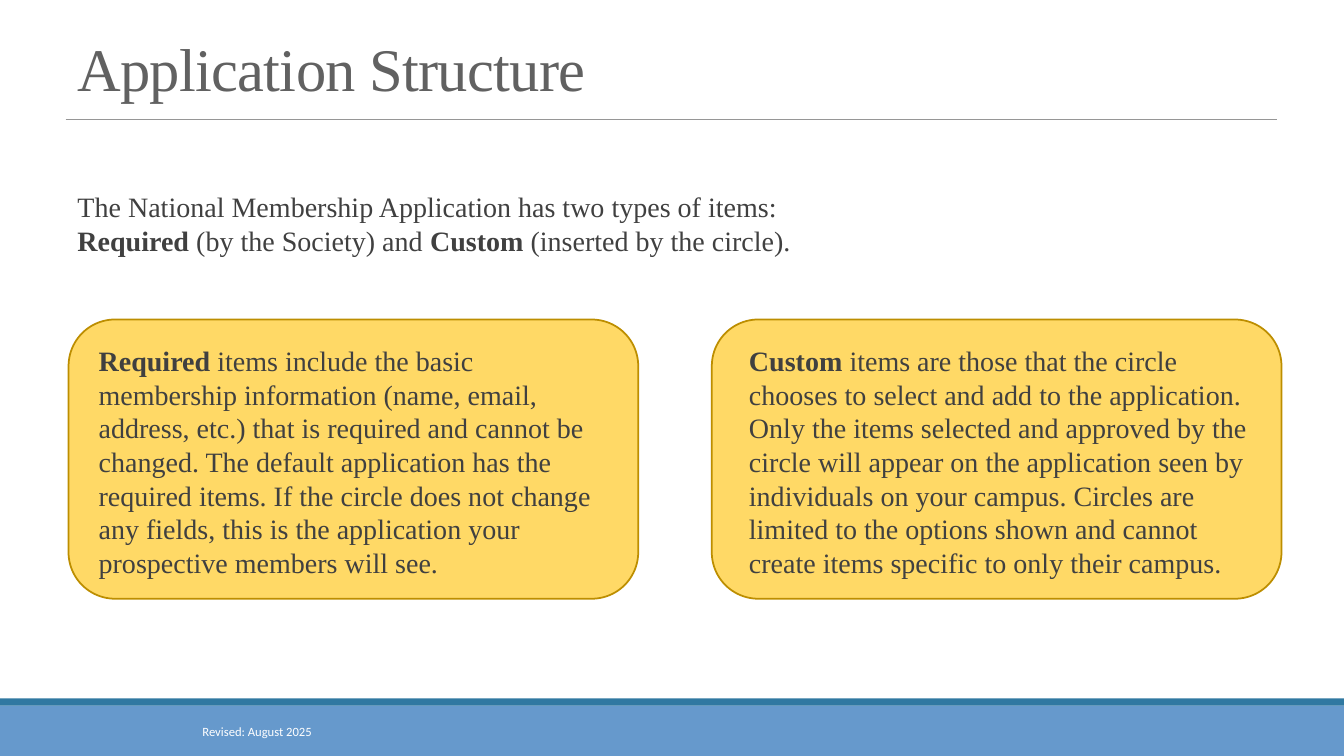
from dataclasses import dataclass

from lxml import etree
from pptx import Presentation
from pptx.dml.color import RGBColor
from pptx.enum.shapes import MSO_CONNECTOR, MSO_SHAPE
from pptx.enum.text import MSO_ANCHOR, MSO_AUTO_SIZE, PP_ALIGN
from pptx.oxml.ns import qn
from pptx.util import Inches, Pt

RECTANGLE, ROUNDED = MSO_SHAPE.RECTANGLE, MSO_SHAPE.ROUNDED_RECTANGLE
STRAIGHT = MSO_CONNECTOR.STRAIGHT
TOP, MIDDLE, BOTTOM = MSO_ANCHOR.TOP, MSO_ANCHOR.MIDDLE, MSO_ANCHOR.BOTTOM
LEFT, CENTER = PP_ALIGN.LEFT, PP_ALIGN.CENTER
FIT_SHAPE, NO_FIT = MSO_AUTO_SIZE.SHAPE_TO_FIT_TEXT, MSO_AUTO_SIZE.NONE

# A paragraph is a list of (text, bold) runs.
TITLE = [[("Application Structure", False)]]
INTRO = [
    [("The National Membership Application has two types of items:", False)],
    [("Required", True), (" (by the Society) and ", False),
     ("Custom", True), (" (inserted by the circle).", False)],
]
REQUIRED = [[
    ("Required", True),
    (" items include the basic membership information (name, email, address, "
     "etc.) that is required and cannot be changed. The default application "
     "has the required items. If the circle does not change any fields, this "
     "is the application your prospective members will see.", False),
]]
CUSTOM = [[
    ("Custom", True),
    (" items are those that the circle chooses to select and add to the "
     "application. Only the items selected and approved by the circle will "
     "appear on the application seen by individuals on your campus. Circles "
     "are limited to the options shown and cannot create items specific to "
     "only their campus.", False),
]]
REVISED = [[("Revised: August 2025", False)]]


@dataclass(frozen=True)
class Theme:
    serif: str = "Times New Roman"
    sans: str = "Calibri"
    title_size: float = 43.2
    body_size: float = 20
    footer_size: float = 9
    title: str = "616161"
    body: str = "404040"
    white: str = "FFFFFF"
    footer: str = "6699CC"
    footer_edge: str = "3078A1"
    rule: str = "969696"
    card: str = "FFD966"
    card_edge: str = "BD8E00"


THEME = Theme()
SLIDE_W, SLIDE_H = 13.33, 7.5
FOOTER_TOP, FOOTER_EDGE_H = 7, 0.07
RULE_LEFT, RULE_RIGHT, RULE_Y = 0.65, 12.67, 1.18
CARD_TOP, CARD_W, CARD_H = 3.17, 5.65, 2.77
CARD_TEXT_TOP, CARD_TEXT_W, CARD_TEXT_H = 3.36, 5.21, 2.46
# (card left, text left, text)
CARDS = [(0.68, 0.88, REQUIRED), (7.06, 7.33, CUSTOM)]


def rgb(value):
    return RGBColor.from_string(value)


def add_block(slide, kind, box, fill, edge=None):
    block = slide.shapes.add_shape(kind, *map(Inches, box))
    block.shadow.inherit = False
    block.fill.solid()
    block.fill.fore_color.rgb = rgb(fill)
    if edge:
        block.line.color.rgb = rgb(edge)
        block.line.width = Pt(1.25)
    else:
        block.line.fill.background()


def add_text(slide, box, paragraphs, *, size=THEME.body_size, font=THEME.serif,
             color=THEME.body, anchor=TOP, align=LEFT, fit=FIT_SHAPE,
             line_spacing=None, tracking=None):
    """Tracking is the letter spacing in points."""
    frame = slide.shapes.add_textbox(*map(Inches, box)).text_frame
    frame.word_wrap = True
    frame.auto_size = fit
    frame.vertical_anchor = anchor
    for index, runs in enumerate(paragraphs):
        paragraph = frame.add_paragraph() if index else frame.paragraphs[0]
        paragraph.alignment = align
        if line_spacing:
            paragraph.line_spacing = line_spacing
        for text, bold in runs:
            run = paragraph.add_run()
            run.text = text
            run.font.name = font
            run.font.size = Pt(size)
            run.font.bold = bold
            run.font.color.rgb = rgb(color)
            if tracking:
                run.font._element.set("spc", str(round(tracking * 100)))


def add_rule(slide):
    rule = slide.shapes.add_connector(
        STRAIGHT, *map(Inches, (RULE_LEFT, RULE_Y, RULE_RIGHT, RULE_Y)))
    rule.line.color.rgb = rgb(THEME.rule)
    rule.line.width = Pt(0.5)
    etree.SubElement(rule._element.spPr, qn("a:effectLst"))


def main():
    deck = Presentation()
    deck.slide_width, deck.slide_height = Inches(SLIDE_W), Inches(SLIDE_H)
    slide = deck.slides.add_slide(deck.slide_layouts[6])

    add_block(slide, RECTANGLE,
              (0, FOOTER_TOP, SLIDE_W, SLIDE_H - FOOTER_TOP), THEME.footer)
    add_block(slide, RECTANGLE,
              (0, FOOTER_TOP - FOOTER_EDGE_H, SLIDE_W, FOOTER_EDGE_H),
              THEME.footer_edge)
    add_rule(slide)
    add_text(slide, (0.67, 0.31, 9.43, 0.77), TITLE, size=THEME.title_size,
             color=THEME.title, anchor=BOTTOM, fit=NO_FIT,
             line_spacing=0.85, tracking=-0.5)
    add_text(slide, (0.67, 1.83, 12.02, 0.77), INTRO)
    for card_left, text_left, text in CARDS:
        add_block(slide, ROUNDED, (card_left, CARD_TOP, CARD_W, CARD_H),
                  THEME.card, THEME.card_edge)
        add_text(slide, (text_left, CARD_TEXT_TOP, CARD_TEXT_W, CARD_TEXT_H),
                 text)
    add_text(slide, (1.2, 7.06, 2.7, 0.4), REVISED, size=THEME.footer_size,
             font=THEME.sans, color=THEME.white, anchor=MIDDLE, align=CENTER,
             fit=NO_FIT)
    deck.save("out.pptx")


if __name__ == "__main__":
    main()
